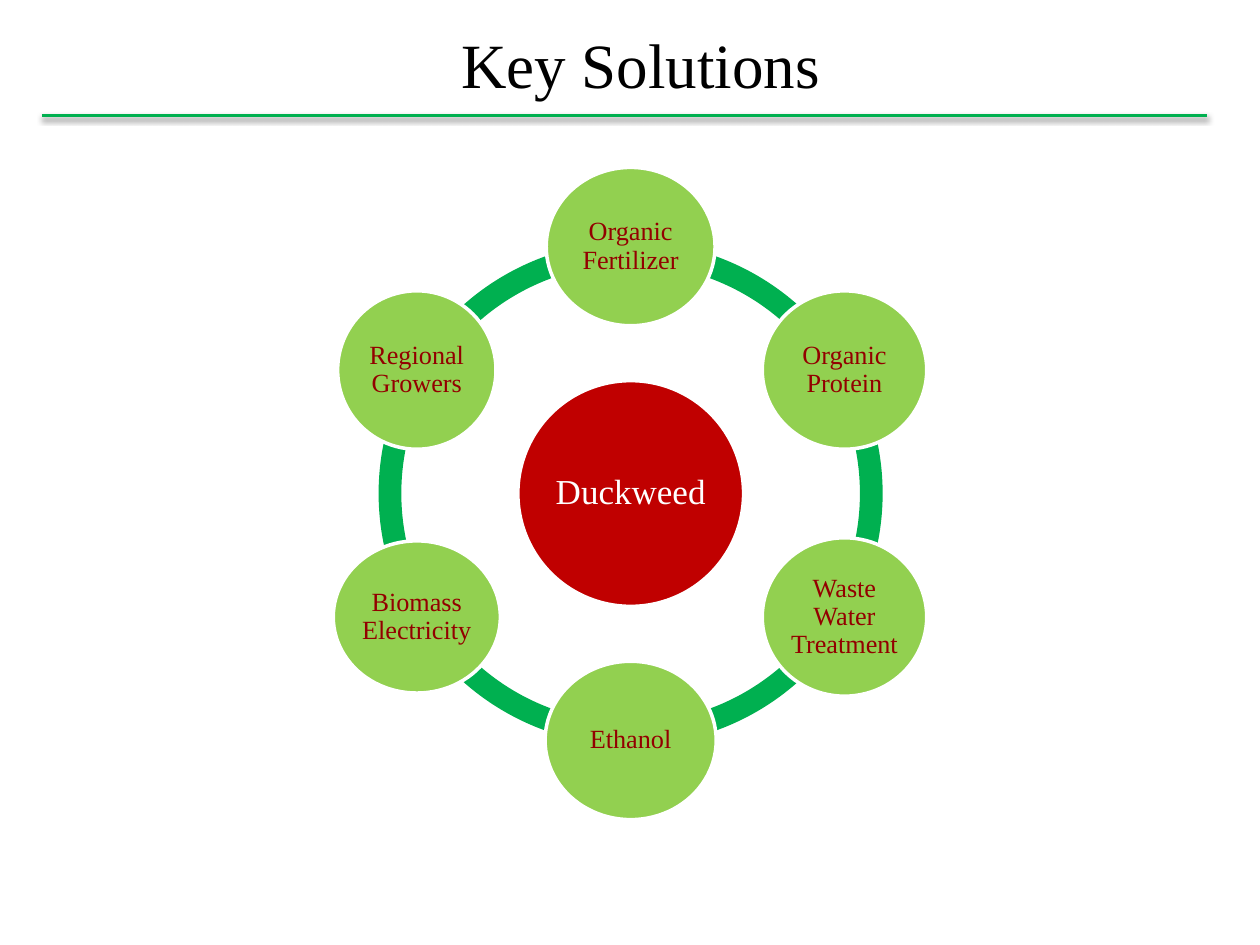
from math import cos, radians, sin

from lxml import etree
from pptx import Presentation
from pptx.dml.color import RGBColor
from pptx.enum.shapes import MSO_CONNECTOR, MSO_SHAPE
from pptx.enum.text import MSO_ANCHOR, PP_ALIGN
from pptx.oxml.ns import qn
from pptx.util import Pt

FONT = "Times New Roman"
GREEN, LIME, RED, MAROON = "00B050", "92D050", "C00000", "920000"
WHITE, BLACK = "FFFFFF", "000000"

# Label, width and height of each node, clockwise from the top
NODES = [
    ("Organic Fertilizer", 96.5, 90.5),
    ("Organic Protein", 94, 90.5),
    ("Waste Water Treatment", 94, 90.5),
    ("Ethanol", 97.8, 90.5),
    ("Biomass Electricity", 95.5, 87),
    ("Regional Growers", 90.5, 90.5),
]


def rgb(color):
    return RGBColor.from_string(color)


def write(sp, text, size=15, color=BLACK, inset=1.5, spacing=1.0):
    tf = sp.text_frame
    tf.word_wrap = True
    tf.vertical_anchor = MSO_ANCHOR.MIDDLE
    tf.margin_left = tf.margin_right = Pt(inset)
    tf.margin_top = tf.margin_bottom = Pt(inset)
    p = tf.paragraphs[0]
    p.alignment = PP_ALIGN.CENTER
    p.line_spacing = spacing
    r = p.add_run()
    r.text = text
    r.font.name = FONT
    r.font.size = Pt(size)
    r.font.color.rgb = rgb(color)


def add_filled(s, kind, cx, cy, w, h, fill):
    """Add a shape without an outline, centred on (cx, cy)."""
    sp = s.shapes.add_shape(kind, Pt(cx - w / 2), Pt(cy - h / 2), Pt(w), Pt(h))
    sp.shadow.inherit = False
    sp.fill.solid()
    sp.fill.fore_color.rgb = rgb(fill)
    sp.line.fill.background()
    return sp


def add_node(s, cx, cy, w, h, fill, text, **fmt):
    sp = add_filled(s, MSO_SHAPE.OVAL, cx, cy, w, h, fill)
    sp.line.color.rgb = rgb(WHITE)
    sp.line.width = Pt(2)
    write(sp, text, spacing=0.9, **fmt)


def add_soft_shadow(line):
    effects = etree.SubElement(line._element.spPr, qn("a:effectLst"))
    shadow = etree.SubElement(
        effects, qn("a:outerShdw"), blurRad=str(Pt(3.1)), dist=str(Pt(1.6)),
        dir="5400000", rotWithShape="0")
    color = etree.SubElement(shadow, qn("a:srgbClr"), val=BLACK)
    etree.SubElement(color, qn("a:alpha"), val="38000")


def add_header(s, x, y, w, h, text):
    # Title
    sp = s.shapes.add_textbox(Pt(x + 18), Pt(y), Pt(648), Pt(h))
    write(sp, text, size=36, inset=3.6)
    # Rule under the title
    line = s.shapes.add_connector(
        MSO_CONNECTOR.STRAIGHT, Pt(x), Pt(y + h), Pt(x + w), Pt(y + h))
    line.line.color.rgb = rgb(GREEN)
    line.line.width = Pt(2)
    add_soft_shadow(line)


def add_cycle(s, x, y, size, hub, nodes):
    cx, cy = x + size / 2, y + size / 2
    orbit = size * 0.49
    step = 360 / len(nodes)
    # Ring segments; the shape's angles are in units of 5/3 degree
    for i in range(len(nodes)):
        start = (270 + i * step) % 360
        sp = add_filled(s, MSO_SHAPE.BLOCK_ARC, cx, cy, size, size, GREEN)
        sp.adjustments[0] = start * 0.6
        sp.adjustments[1] = (start + step) % 360 * 0.6
        sp.adjustments[2] = 0.045
    # Hub
    add_node(s, cx, cy, 129, 129, RED, hub, size=20, color=WHITE, inset=2)
    # Nodes around the ring
    for i, (text, w, h) in enumerate(nodes):
        angle = radians(270 + i * step)
        add_node(s, cx + orbit * cos(angle), cy + orbit * sin(angle), w, h,
                 LIME, text, color=MAROON)


def main():
    prs = Presentation()
    prs.slide_width, prs.slide_height = Pt(720), Pt(540)
    s = prs.slides.add_slide(prs.slide_layouts[6])
    add_cycle(s, 216.4, 138, 288, "Duckweed", NODES)
    add_header(s, 24, 6, 666, 60, "Key Solutions")
    prs.save("out.pptx")


if __name__ == "__main__":
    main()
